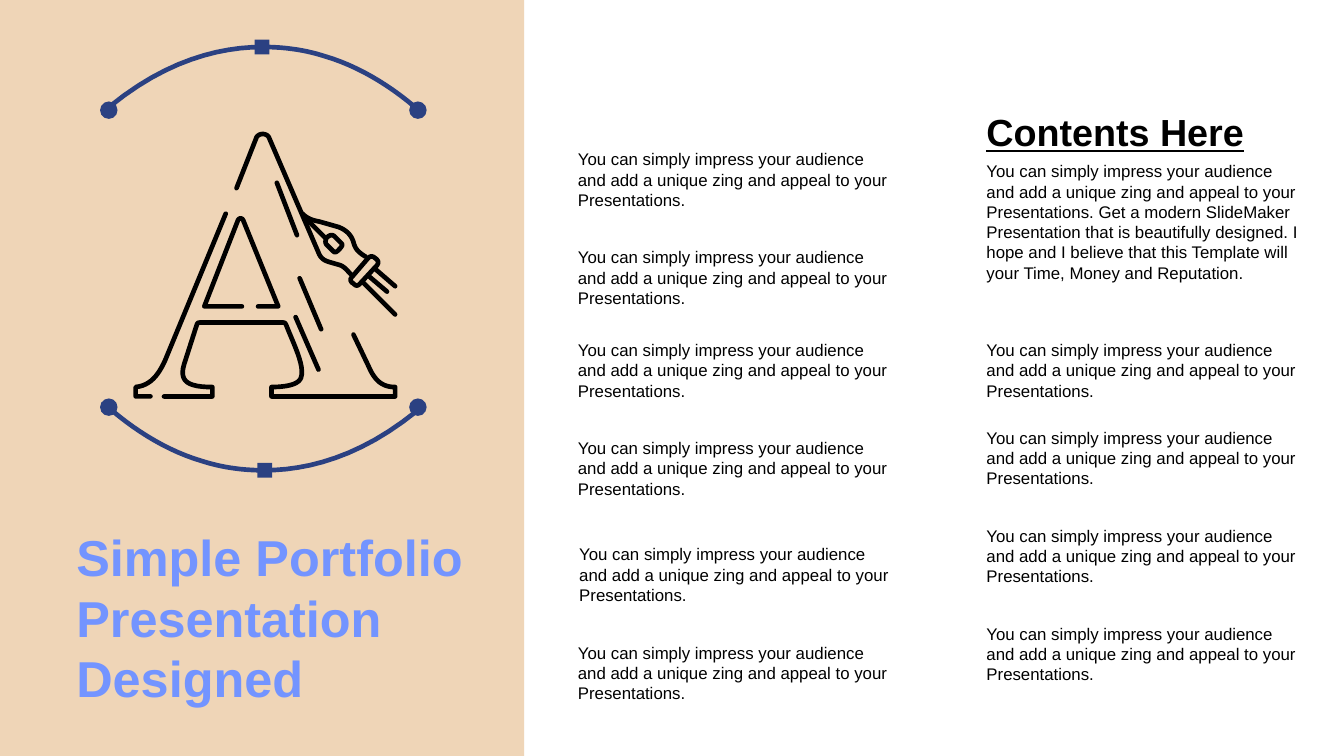
from lxml import etree
from pptx import Presentation
from pptx import util as u
from pptx.dml.color import RGBColor
from pptx.enum import shapes, text
from pptx.oxml import ns

NAVY, BLACK, SAND, BLUE = "2B4182", "000000", "DBA15C", "7394FF"
BLURB = "You can simply impress your audience and add a unique zing and appeal to your Presentations."
INTRO = BLURB + (" Get a modern SlideMaker Presentation that is beautifully designed. I hope and I "
                 "believe that this Template will your Time, Money and Reputation.")

# Contours: a pair is a point, six numbers are a Bezier curve to the last pair.
ARC = [(0.84, 3.06), (1.03, 3.22, 1.26, 3.36, 1.5, 3.43),
       (1.62, 3.47, 1.78, 3.5, 1.96, 3.5), (2.29, 3.5, 2.68, 3.4, 3.1, 3.06)]
PEN = [
    [(1.76, 1.4), (1.91, 1.02), (1.93, 0.99, 1.98, 0.99, 2, 1.02), (2.37, 1.88),
     (2.39, 1.93, 2.42, 1.94, 2.45, 1.95), (2.52, 1.97), (2.56, 1.98, 2.58, 2.01, 2.61, 2.04)],
    [(2.25, 1.59), (2.29, 1.63, 2.33, 1.64, 2.38, 1.65), (2.52, 1.69),
     (2.57, 1.71, 2.61, 1.74, 2.63, 1.8), (2.64, 1.85, 2.67, 1.88, 2.72, 1.91)],
    [(2.27, 1.62), (2.42, 1.77)],
    [(2.43, 1.77), (2.46, 1.74, 2.48, 1.75, 2.49, 1.76), (2.54, 1.81),
     (2.55, 1.82, 2.55, 1.83, 2.52, 1.86), (2.5, 1.88, 2.49, 1.88, 2.48, 1.87), (2.43, 1.82),
     (2.42, 1.81, 2.42, 1.79, 2.43, 1.77)],
    [(2.62, 2.06), (2.74, 1.92), (2.76, 1.9, 2.78, 1.91, 2.79, 1.92),
     (2.82, 1.94, 2.82, 1.96, 2.8, 1.98), (2.68, 2.11),
     (2.66, 2.13, 2.65, 2.13, 2.63, 2.11), (2.61, 2.1, 2.6, 2.08, 2.62, 2.06)],
    [(2.79, 2), (2.94, 2.13)],
    [(2.75, 2.06), (2.88, 2.17)],
    [(2.7, 2.1), (2.94, 2.34)],
]
FEET = [[(2.63, 2.49), (2.74, 2.72), (2.79, 2.84, 2.85, 2.88, 2.94, 2.88), (2.94, 2.95),
         (2.02, 2.95), (2.02, 2.88), (2.1, 2.88, 2.22, 2.87, 2.24, 2.81),
         (2.27, 2.72, 2.18, 2.55, 2.13, 2.42), (2.12, 2.4, 2.12, 2.4, 2.09, 2.4), (1.5, 2.4),
         (1.47, 2.4, 1.47, 2.4, 1.46, 2.43), (1.37, 2.71),
         (1.33, 2.84, 1.4, 2.88, 1.58, 2.88), (1.58, 2.95), (1.22, 2.95)]]
TRIANGLE = [[(1.8, 2.28), (1.52, 2.28), (1.77, 1.64), (1.78, 1.62, 1.8, 1.62, 1.81, 1.64),
             (2.07, 2.28), (1.92, 2.28)]]
LEFT_LEG = [[(1.12, 2.95), (1.01, 2.95), (1.01, 2.88), (1.12, 2.87, 1.18, 2.79, 1.23, 2.68),
             (1.68, 1.59)]]
SHADING = [[[(2.06, 1.36), (2.21, 1.75)]], [[(2.23, 2.07), (2.39, 2.45)]],
           [[(2.2, 2.36), (2.37, 2.75)]]]


def colour(value):
    return RGBColor.from_string(value)


def flatten(contour, steps=12):
    """Turn the curves of a contour into short straight pieces."""
    points = [contour[0]]
    for item in contour[1:]:
        if len(item) == 2:
            points.append(item)
            continue
        controls = [points[-1], item[:2], item[2:4], item[4:]]
        for step in range(1, steps + 1):
            t = step / steps
            weights = ((1 - t) ** 3, 3 * t * (1 - t) ** 2, 3 * t * t * (1 - t), t ** 3)
            points.append(tuple(sum(w * c[axis] for w, c in zip(weights, controls))
                                for axis in (0, 1)))
    return points


class SlidePainter:
    font = "Arial"
    stroke_width = u.Pt(2.5)

    def __init__(self, slide):
        self.slide = slide

    def background(self, fill):
        self.slide.background.fill.solid()
        self.slide.background.fill.fore_color.rgb = colour(fill)

    def shape(self, kind, left, top, width, height, fill, alpha=None):
        shape = self.slide.shapes.add_shape(kind, *map(u.Inches, (left, top, width, height)))
        shape.shadow.inherit = False
        shape.line.fill.background()
        shape.fill.solid()
        shape.fill.fore_color.rgb = colour(fill)
        if alpha is not None:
            tint = shape.element.spPr.find(".//" + ns.qn("a:srgbClr"))
            etree.SubElement(tint, ns.qn("a:alpha")).set("val", str(alpha * 1000))

    def marker(self, kind, x, y, size):
        self.shape(kind, x - size / 2, y - size / 2, size, size, NAVY)

    def strokes(self, contours, line):
        """Draw open contours as one unfilled outline with round ends."""
        builder = None
        for contour in contours:
            start, *rest = [tuple(map(u.Inches, point)) for point in flatten(contour)]
            if builder is None:
                builder = self.slide.shapes.build_freeform(*start)
            else:
                builder.move_to(*start)
            builder.add_line_segments(rest, close=False)
        shape = builder.convert_to_shape()
        shape.shadow.inherit = False
        shape.fill.background()
        shape.line.color.rgb = colour(line)
        shape.line.width = self.stroke_width
        outline = shape.element.spPr.find(ns.qn("a:ln"))
        outline.set("cap", "rnd")
        etree.SubElement(outline, ns.qn("a:round"))

    def text(self, words, left, top, width, height, size=9, ink=BLACK, inset=0.09,
             middle=False, bold=None, underline=None):
        box = self.slide.shapes.add_textbox(*map(u.Inches, (left, top, width, height)))
        frame = box.text_frame
        frame.word_wrap = True
        frame.margin_left = frame.margin_right = u.Inches(inset)
        frame.vertical_anchor = text.MSO_ANCHOR.MIDDLE if middle else text.MSO_ANCHOR.TOP
        frame.text = words
        font = frame.paragraphs[0].runs[0].font
        font.name, font.size, font.bold, font.underline = self.font, u.Pt(size), bold, underline
        font.color.rgb = colour(ink)


def main():
    presentation = Presentation()
    presentation.slide_width = u.Inches(10)
    presentation.slide_height = presentation.slide_width * 9 // 16
    painter = SlidePainter(presentation.slides.add_slide(presentation.slide_layouts[6]))
    painter.background("FFFFFF")
    painter.shape(shapes.MSO_SHAPE.RECTANGLE, 0, 0, 3.9, presentation.slide_height.inches
                  if hasattr(presentation.slide_height, "inches") else 5.63, SAND, alpha=44)

    painter.text(INTRO, 7.25, 1.15, 2.5, 1.01)
    painter.text("Contents Here", 7.25, 0.76, 2.5, 0.44, size=20.2, middle=True,
                 bold=True, underline=True)
    painter.text("Simple Portfolio Presentation Designed", 0.47, 3.8, 3.2, 1.58, size=27,
                 ink=BLUE, inset=0.1, middle=True, bold=True)
    columns = {4.21: (1.06, 1.79, 2.48, 3.21, 4.73), 4.22: (4,), 7.25: (2.48, 3.13, 3.86, 4.59)}
    for left, tops in columns.items():
        for top in tops:
            painter.text(BLURB, left, top, 2.5, 0.56)

    # The upper arc is the lower one turned by half a circle.
    for turned in (False, True):
        def place(x, y):
            return (3.92 - x, 3.85 - y) if turned else (x, y)

        arc = [sum((place(*item[i:i + 2]) for i in range(0, len(item), 2)), ()) for item in ARC]
        painter.strokes([arc], NAVY)
        for x in (0.81, 3.11):
            painter.marker(shapes.MSO_SHAPE.OVAL, *place(x, 3.03), 0.13)
        painter.marker(shapes.MSO_SHAPE.RECTANGLE, *place(1.97, 3.5), 0.11)

    for part in (PEN, FEET, TRIANGLE, LEFT_LEG, *SHADING):
        painter.strokes(part, BLACK)
    presentation.save("out.pptx")


if __name__ == "__main__":
    main()
